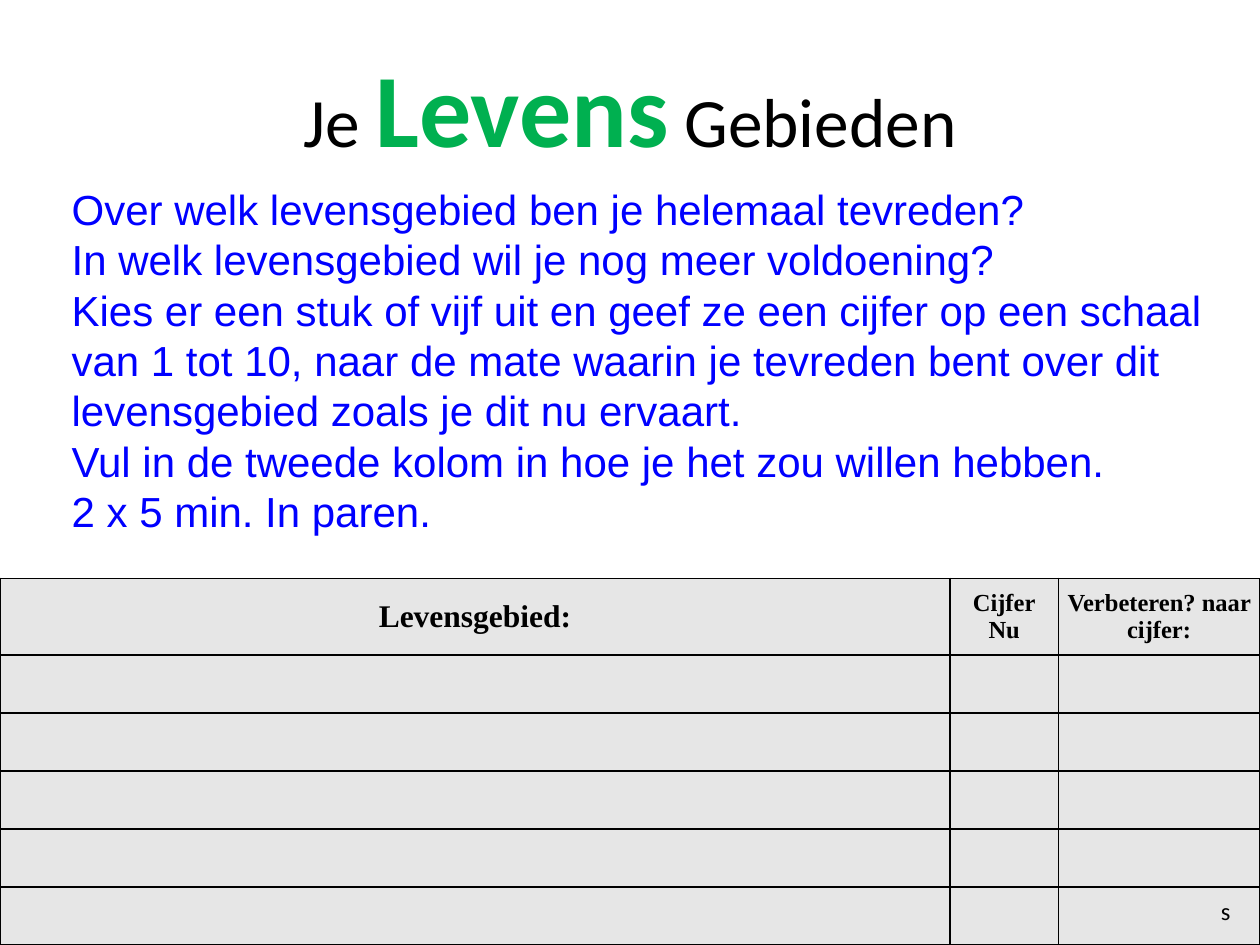
from lxml import etree
from pptx import Presentation
from pptx.dml.color import RGBColor
from pptx.enum import text
from pptx.oxml import ns
from pptx.util import Inches, Pt

TITLE = [("Je ", 39.6, "000000", False),
         ("Levens", 59.4, "00B050", True),
         (" Gebieden", 39.6, "000000", False)]
QUESTIONS = [
    "Over welk levensgebied ben je helemaal tevreden?",
    "In welk levensgebied wil je nog meer voldoening?",
    "Kies er een stuk of vijf uit en geef ze een cijfer op een schaal van 1 tot 10, "
    "naar de mate waarin je tevreden bent over dit levensgebied zoals je dit nu ervaart. ",
    "Vul in de tweede kolom in hoe je het zou willen hebben.",
    "2 x 5 min. In paren.",
]
# heading, size, column width
COLUMNS = [("Levensgebied:", 18, 7.54),
           ("Cijfer\nNu", 14, 0.86),
           ("Verbeteren? naar cijfer:", 14, 1.6)]
HEADER_HEIGHT, ROW_HEIGHT, EMPTY_ROWS = 0.61, 0.46, 5


def rgb(value):
    """Turn a hex string into a colour."""
    return RGBColor.from_string(value)


def style(run, font, size, color, bold=False):
    """Format one run."""
    run.font.name, run.font.size, run.font.bold = font, Pt(size), bold
    run.font.color.rgb = rgb(color)


def add_text(slide, place, wrap=True, anchor=text.MSO_ANCHOR.MIDDLE):
    """Add a text box and return its frame."""
    frame = slide.shapes.add_textbox(*map(Inches, place)).text_frame
    frame.word_wrap, frame.vertical_anchor = wrap, anchor
    return frame


def style_cell(cell):
    """Give a cell its grey fill, margins and black borders."""
    cell.margin_left = cell.margin_right = Inches(0.05)
    cell.margin_top = cell.margin_bottom = 0
    cell.vertical_anchor = text.MSO_ANCHOR.MIDDLE
    properties = cell._tc.get_or_add_tcPr()
    for side in ("lnL", "lnR", "lnT", "lnB"):
        border = etree.SubElement(properties, ns.qn("a:" + side), w=str(Pt(1)))
        fill = etree.SubElement(border, ns.qn("a:solidFill"))
        etree.SubElement(fill, ns.qn("a:srgbClr"), val="000000")
    cell.fill.solid()
    cell.fill.fore_color.rgb = rgb("E6E6E6")


def add_score_table(slide):
    """Add the table for life areas and scores."""
    heights = [HEADER_HEIGHT] + [ROW_HEIGHT] * EMPTY_ROWS
    table = slide.shapes.add_table(
        len(heights), len(COLUMNS), 0, Inches(4.59),
        Inches(10), Inches(sum(heights))).table
    for row, height in zip(table.rows, heights):
        row.height = Inches(height)
    for cell in table.iter_cells():
        style_cell(cell)
    for index, (heading, size, width) in enumerate(COLUMNS):
        table.columns[index].width = Inches(width)
        frame = table.cell(0, index).text_frame
        frame.text = heading
        for paragraph in frame.paragraphs:
            paragraph.alignment = text.PP_ALIGN.CENTER
            style(paragraph.runs[0], "Times New Roman", size, "000000", True)


deck = Presentation()
deck.slide_width, deck.slide_height = Inches(10), Inches(7.5)
slide = deck.slides.add_slide(deck.slide_layouts[6])

title = add_text(slide, (0.75, 0.29, 8.5, 1.1)).paragraphs[0]
title.alignment = text.PP_ALIGN.CENTER
for words, size, color, bold in TITLE:
    run = title.add_run()
    run.text = words
    style(run, "Calibri", size, color, bold)

add_score_table(slide)

questions = add_text(slide, (0.47, 1.39, 9.25, 2.93))
questions.text = "\n".join(QUESTIONS)
for paragraph in questions.paragraphs:
    style(paragraph.runs[0], "Arial", 24, "0000FF")

corner = add_text(slide, (9.59, 7.06, 0.28, 0.34), False, text.MSO_ANCHOR.TOP)
corner.text = "s"
style(corner.paragraphs[0].runs[0], "Calibri", 14, "020202")

deck.save("out.pptx")
